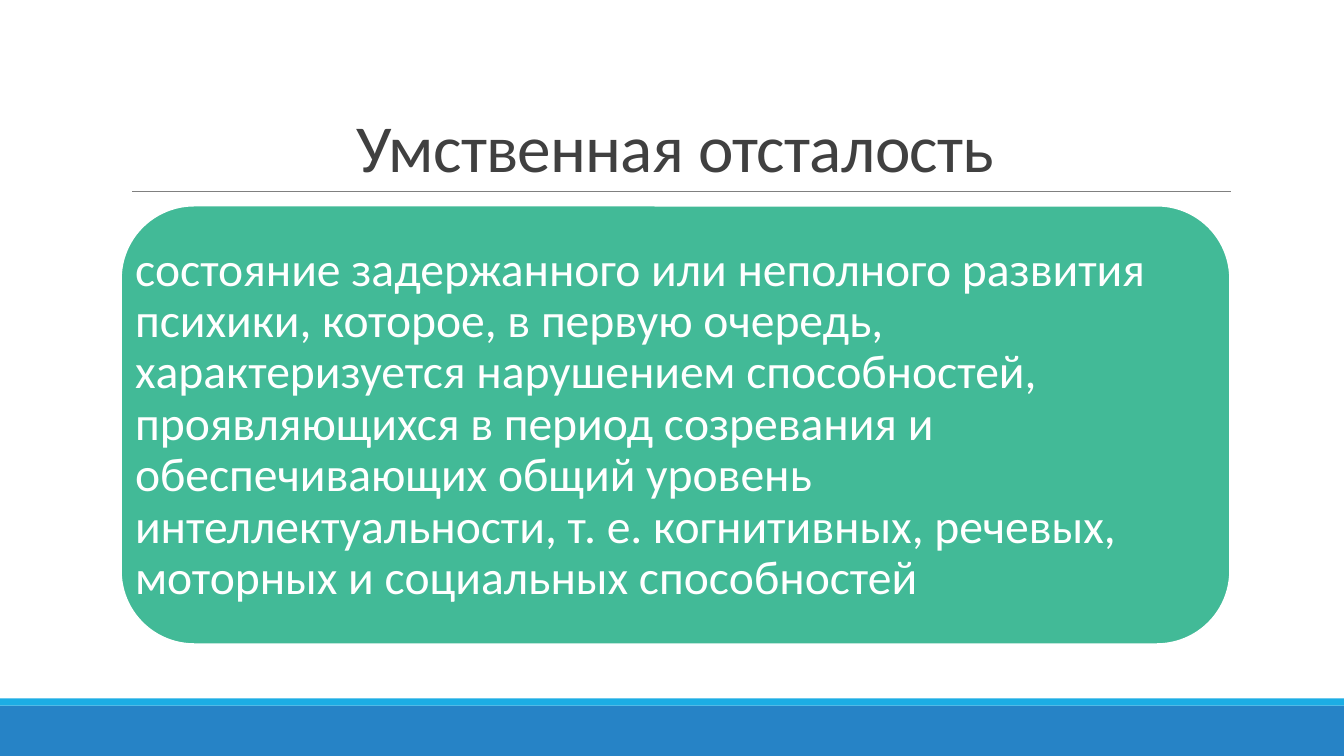
from pptx import Presentation
from pptx.dml.color import RGBColor
from pptx.enum.shapes import MSO_CONNECTOR, MSO_SHAPE
from pptx.enum.text import MSO_ANCHOR, PP_ALIGN
from pptx.oxml.ns import qn
from pptx.util import Inches, Pt

# Content
TITLE = "Умственная отсталость"
BODY = (
    "состояние задержанного или неполного развития психики, которое, "
    "в первую очередь, характеризуется нарушением способностей, "
    "проявляющихся в период созревания и обеспечивающих общий уровень "
    "интеллектуальности, т. е. когнитивных, речевых, моторных и "
    "социальных способностей"
)

# Look
FONT = "Calibri"
WHITE = RGBColor(0xFF, 0xFF, 0xFF)
DARK = RGBColor(0x40, 0x40, 0x40)
GRAY = RGBColor(0x80, 0x80, 0x80)
GREEN = RGBColor(0x42, 0xBA, 0x97)
BLUE = RGBColor(0x26, 0x83, 0xC6)
CYAN = RGBColor(0x1C, 0xAD, 0xE4)

# Layout in inches
WIDTH, HEIGHT = 13.33, 7.5
BAND, STRIPE = 0.5, 0.07
LEFT, SPAN = 1.2, 11
HEAD = (LEFT, 0.31, SPAN, 1.59)
CARD = (LEFT, 2.04, SPAN, 4.35)
RULE = HEAD[1] + HEAD[3]

deck = Presentation()
deck.slide_width, deck.slide_height = Inches(WIDTH), Inches(HEIGHT)
slide = deck.slides.add_slide(deck.slide_layouts[6])


def add_block(kind, box, fill, edge=None):
    shape = slide.shapes.add_shape(kind, *map(Inches, box))
    shape.shadow.inherit = False
    shape.fill.solid()
    shape.fill.fore_color.rgb = fill
    if edge is None:
        shape.line.fill.background()
    else:
        shape.line.color.rgb = edge
        shape.line.width = Pt(1.25)


def add_text(text, box, *, size, color, align, anchor, lead,
             pad=(0.1, 0.05), track=0):
    frame = slide.shapes.add_textbox(*map(Inches, box)).text_frame
    frame.word_wrap = True
    frame.vertical_anchor = anchor
    frame.margin_left = frame.margin_right = Inches(pad[0])
    frame.margin_top = frame.margin_bottom = Inches(pad[1])
    para = frame.paragraphs[0]
    para.alignment, para.line_spacing = align, lead
    run = para.add_run()
    run.text = text
    run.font.name, run.font.size = FONT, Pt(size)
    run.font.color.rgb = color
    if track:
        run.font._element.set("spc", str(round(track * 100)))


# Footer bands
base = HEIGHT - BAND
add_block(MSO_SHAPE.RECTANGLE, (0, base, WIDTH, BAND), BLUE)
add_block(MSO_SHAPE.RECTANGLE, (0, base - STRIPE, WIDTH, STRIPE), CYAN)

# Rule under the title
rule = slide.shapes.add_connector(
    MSO_CONNECTOR.STRAIGHT,
    Inches(1.31), Inches(RULE), Inches(12.21), Inches(RULE))
rule.line.color.rgb = GRAY
rule.line.width = Pt(0.5)
props = rule._element.spPr
props.append(props.makeelement(qn("a:effectLst"), {}))

# Title
add_text(TITLE, HEAD, size=48, color=DARK, align=PP_ALIGN.CENTER,
         anchor=MSO_ANCHOR.BOTTOM, lead=0.85, track=-0.5)

# Definition card
add_block(MSO_SHAPE.ROUNDED_RECTANGLE, CARD, GREEN, edge=WHITE)
add_text(BODY, CARD, size=34, color=WHITE, align=PP_ALIGN.LEFT,
         anchor=MSO_ANCHOR.MIDDLE, lead=0.9, pad=(0.14, 0.14))

deck.save("out.pptx")
